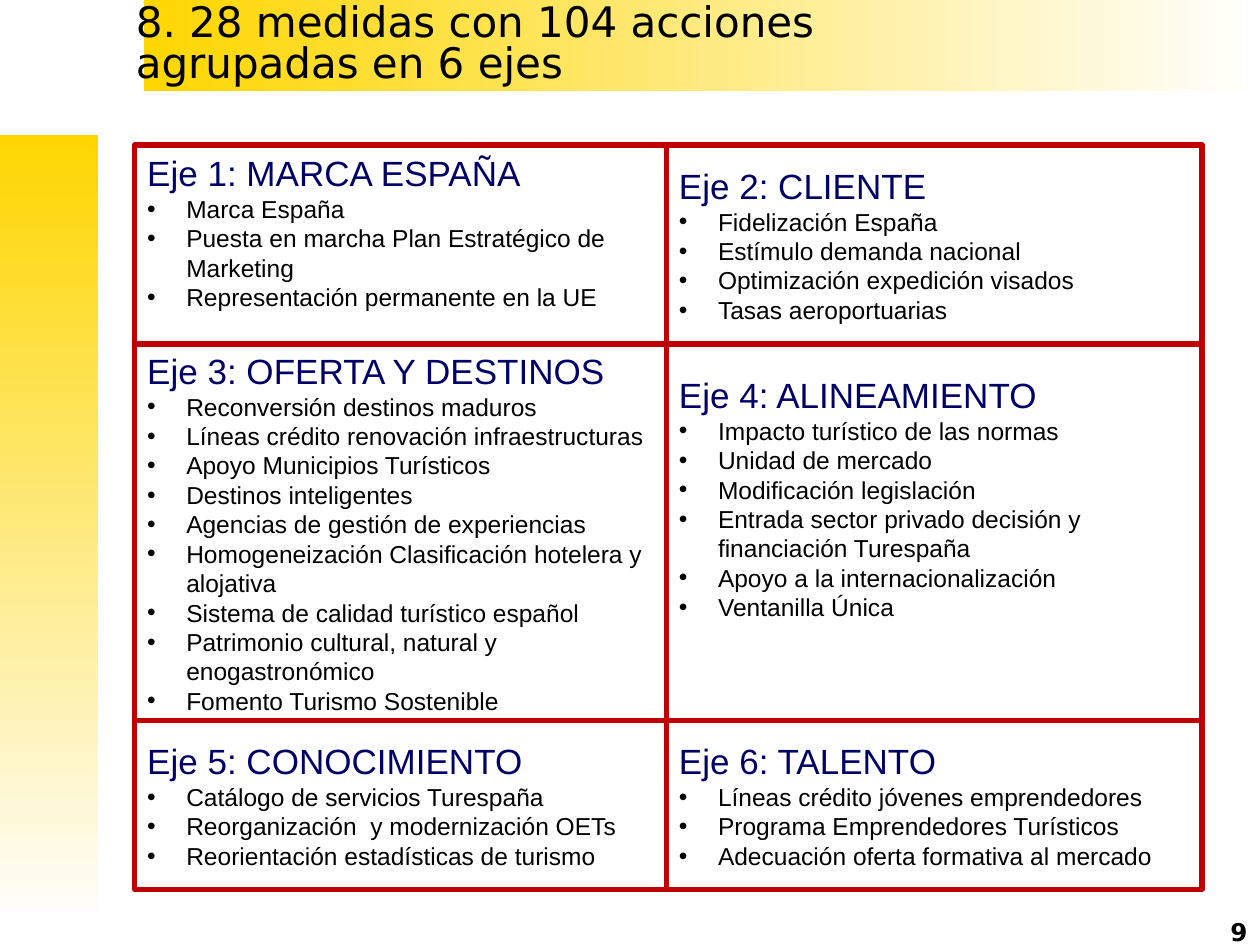
"""Build the slide that groups the tourism plan's measures under six axes."""
import pptx
import pptx.dml.color
import pptx.enum.shapes
import pptx.enum.text
import pptx.util
from lxml import etree

COLORS = {
    "gold": "FED600",
    "white": "FFFFFF",
    "cream": "FFFDF8",
    "border": "C00000",
    "heading": "000066",
    "body": "000000",
}

TITLE = "8. 28 medidas con 104 acciones agrupadas en 6 ejes"
PAGE_NUMBER = "9"

AXES = [
    ("Eje 1: MARCA ESPAÑA", [
        "Marca España",
        "Puesta en marcha Plan Estratégico de Marketing",
        "Representación permanente en la UE",
    ]),
    ("Eje 2: CLIENTE", [
        "Fidelización España",
        "Estímulo demanda nacional",
        "Optimización expedición visados",
        "Tasas aeroportuarias",
    ]),
    ("Eje 3: OFERTA Y DESTINOS", [
        "Reconversión destinos maduros",
        "Líneas crédito renovación infraestructuras",
        "Apoyo Municipios Turísticos",
        "Destinos inteligentes",
        "Agencias de gestión de experiencias",
        "Homogeneización Clasificación hotelera y alojativa",
        "Sistema de calidad turístico español",
        "Patrimonio cultural, natural y enogastronómico",
        "Fomento Turismo Sostenible",
    ]),
    ("Eje 4: ALINEAMIENTO", [
        "Impacto turístico de las normas",
        "Unidad de mercado",
        "Modificación legislación",
        "Entrada sector privado decisión y financiación Turespaña",
        "Apoyo a la internacionalización",
        "Ventanilla Única",
    ]),
    ("Eje 5: CONOCIMIENTO", [
        "Catálogo de servicios Turespaña",
        "Reorganización  y modernización OETs",
        "Reorientación estadísticas de turismo",
    ]),
    ("Eje 6: TALENTO", [
        "Líneas crédito jóvenes emprendedores",
        "Programa Emprendedores Turísticos",
        "Adecuación oferta formativa al mercado",
    ]),
]
BOTTOM_INSETS = {0: 0.25, 3: 0.6}

GRID_LEFT, GRID_TOP = 1.07, 1.15
COLUMN_PITCH, COLUMN_WIDTH = 4.22, 4.25
ROW_HEIGHTS = [1.58, 2.99, 1.34]
BULLET_INDENT = 0.31

BANDS = [
    ((1.14, 0, 8.86, 0.44), "white", 0),
    ((1.14, 0.28, 8.86, 0.44), "white", 0),
    ((0.31, 1.07, 0.47, 6.15), "cream", 270),
    ((0, 1.07, 0.58, 6.15), "cream", 270),
]


def rgb(name):
    return pptx.dml.color.RGBColor.from_string(COLORS[name])


def inches(lengths):
    return [pptx.util.Inches(length) for length in lengths]


def add_rectangle(slide, place):
    rectangle = slide.shapes.add_shape(
        pptx.enum.shapes.MSO_SHAPE.RECTANGLE, *inches(place))
    rectangle.shadow.inherit = False
    return rectangle


def add_band(slide, place, end_color, angle):
    band = add_rectangle(slide, place)
    band.line.fill.background()
    band.fill.gradient()
    band.fill.gradient_angle = angle
    for stop, color in zip(band.fill.gradient_stops, ("gold", end_color)):
        stop.color.rgb = rgb(color)
    band.fill.gradient_stops[0].position = 0
    band.fill.gradient_stops[1].position = 1


def write(frame, text, size=14, color="body", font="Arial", bold=False,
          align="LEFT", spacing=None, bullet=False):
    frame.word_wrap = True
    frame.vertical_anchor = pptx.enum.text.MSO_ANCHOR.MIDDLE
    paragraph = frame.paragraphs[0]
    if paragraph.runs:
        paragraph = frame.add_paragraph()
    paragraph.alignment = getattr(pptx.enum.text.PP_ALIGN, align)
    if spacing:
        paragraph.line_spacing = spacing
    if bullet:
        properties = paragraph._p.get_or_add_pPr()
        indent = pptx.util.Inches(BULLET_INDENT)
        properties.set("marL", str(indent))
        properties.set("indent", str(-indent))
        namespace = properties.nsmap["a"]
        etree.SubElement(properties, f"{{{namespace}}}buFont", typeface="Arial")
        etree.SubElement(properties, f"{{{namespace}}}buChar", char="•")
    run = paragraph.add_run()
    run.text = text
    run.font.size = pptx.util.Pt(size)
    run.font.name = font
    run.font.bold = bold
    run.font.color.rgb = rgb(color)


def add_axis(slide, index, heading, measures):
    row, column = divmod(index, 2)
    axis = add_rectangle(slide, (
        GRID_LEFT + column * COLUMN_PITCH,
        GRID_TOP + sum(ROW_HEIGHTS[:row]),
        COLUMN_WIDTH,
        ROW_HEIGHTS[row],
    ))
    axis.fill.solid()
    axis.fill.fore_color.rgb = rgb("white")
    axis.line.color.rgb = rgb("border")
    axis.line.width = pptx.util.Pt(3)
    frame = axis.text_frame
    frame.margin_bottom = pptx.util.Inches(BOTTOM_INSETS.get(index, 0.05))
    write(frame, heading, size=20, color="heading")
    for measure in measures:
        write(frame, measure, bullet=True)


def main():
    deck = pptx.Presentation()
    deck.slide_width, deck.slide_height = inches((10, 7.5))
    slide = deck.slides.add_slide(deck.slide_layouts[6])
    for place, end_color, angle in BANDS:
        add_band(slide, place, end_color, angle)
    for index, (heading, measures) in enumerate(AXES):
        add_axis(slide, index, heading, measures)
    title = slide.shapes.add_textbox(*inches((0.98, 0.05, 5.75, 0.63)))
    write(title.text_frame, TITLE, size=24, font="DejaVu Sans", spacing=0.8)
    number = slide.shapes.add_textbox(*inches((8.94, 7.29, 1.06, 0.21)))
    write(number.text_frame, PAGE_NUMBER, font="DejaVu Sans", bold=True,
          align="RIGHT")
    deck.save("out.pptx")


if __name__ == "__main__":
    main()
